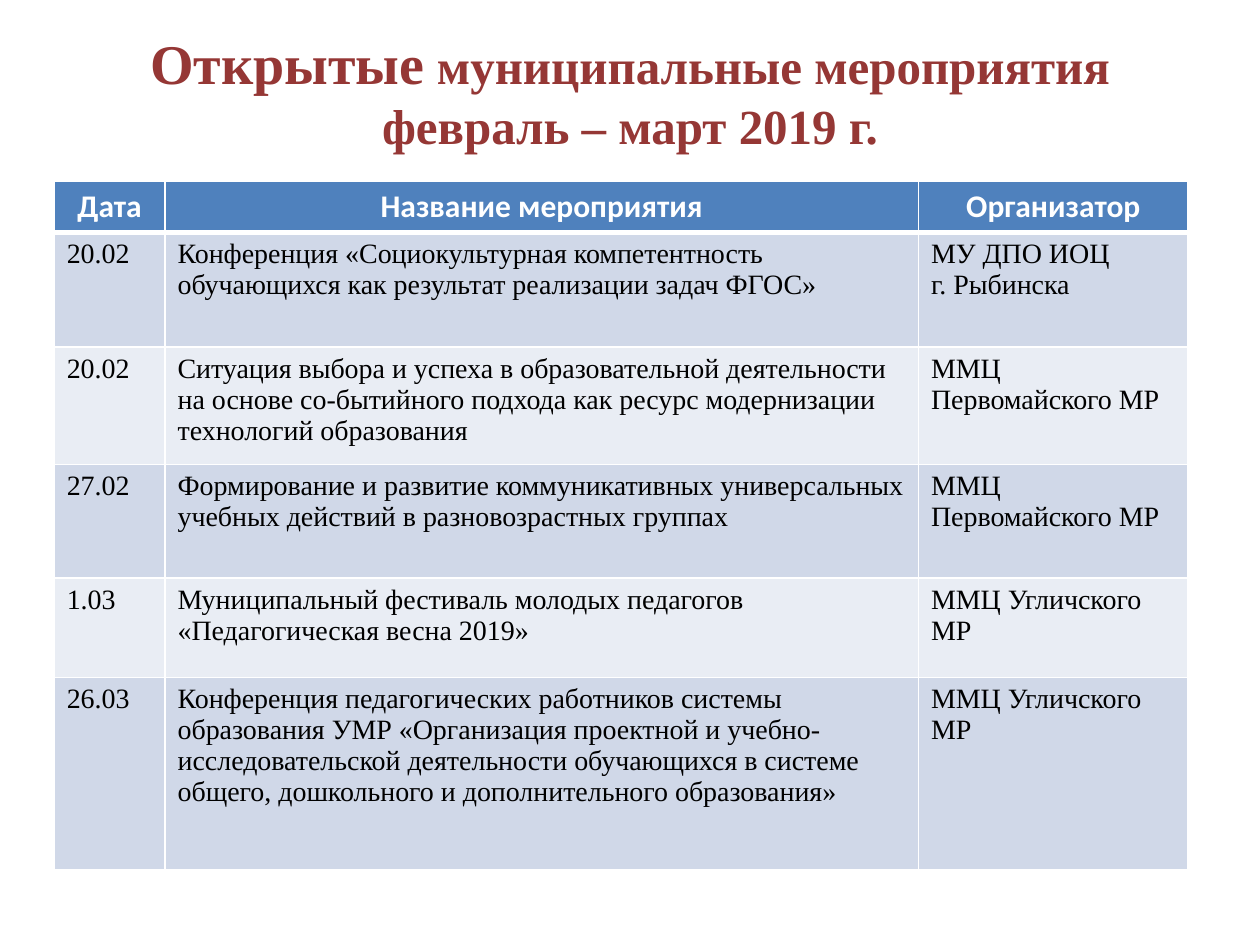
from dataclasses import dataclass

import pptx
import pptx.dml.color
import pptx.enum.text
import pptx.oxml
import pptx.oxml.ns
import pptx.util

Inches = pptx.util.Inches
Pt = pptx.util.Pt
RGB = pptx.dml.color.RGBColor.from_string
CENTER = pptx.enum.text.PP_ALIGN.CENTER
LEFT = pptx.enum.text.PP_ALIGN.LEFT


@dataclass(frozen=True)
class Theme:
    title_font: str = "Times New Roman"
    header_font: str = "Calibri"
    body_font: str = "Times New Roman"
    title_color: str = "953735"
    header_color: str = "FFFFFF"
    body_color: str = "000000"
    header_fill: str = "4F81BD"
    band_fills: tuple = ("D0D8E8", "E9EDF4")
    border_color: str = "FFFFFF"
    title_lead_size: int = 32
    title_size: int = 28
    header_size: int = 18
    body_size: int = 16
    border: int = 1
    header_border: int = 3


class SlideBuilder:
    def __init__(self, prs, theme):
        self.theme = theme
        self.slide = prs.slides.add_slide(prs.slide_layouts[5])

    def style(self, font, name, size, color, bold):
        font.name = name
        font.size = Pt(size)
        font.bold = bold
        font.color.rgb = RGB(color)

    def title(self, lead, rest, second_line, left, top, width, height):
        t = self.theme
        sp = self.slide.shapes.title
        sp.left, sp.top = Inches(left), Inches(top)
        sp.width, sp.height = Inches(width), Inches(height)
        tf = sp.text_frame
        tf.word_wrap = True
        tf.auto_size = pptx.enum.text.MSO_AUTO_SIZE.NONE
        tf.vertical_anchor = pptx.enum.text.MSO_ANCHOR.MIDDLE
        tf.margin_bottom = Inches(0.45)  # lifts the two lines above the table
        p = tf.paragraphs[0]
        p.alignment = CENTER
        self.style(p.font, t.title_font, t.title_size, t.title_color, True)

        def add_run(text, size):
            r = p.add_run()
            r.text = text
            self.style(r.font, t.title_font, size, t.title_color, True)

        add_run(lead, t.title_lead_size)
        add_run(rest, t.title_size)
        p.add_line_break()
        add_run(second_line, t.title_size)

    def borders(self, cell, top, bottom):
        t = self.theme
        tcPr = cell._tc.get_or_add_tcPr()
        widths = {"L": t.border, "R": t.border, "T": top, "B": bottom}
        for i, (side, width) in enumerate(widths.items()):
            ln = pptx.oxml.parse_xml(
                f'<a:ln{side} {pptx.oxml.ns.nsdecls("a")} w="{Pt(width)}">'
                f'<a:solidFill><a:srgbClr val="{t.border_color}"/></a:solidFill>'
                f'</a:ln{side}>')
            tcPr.insert(i, ln)

    def cell(self, cell, text, row):
        t = self.theme
        header = row == 0
        cell.text = text
        cell.fill.solid()
        cell.fill.fore_color.rgb = RGB(
            t.header_fill if header else t.band_fills[(row - 1) % 2])
        for p in cell.text_frame.paragraphs:
            p.alignment = CENTER if header else LEFT
            if header:
                self.style(p.font, t.header_font, t.header_size, t.header_color, True)
            else:
                self.style(p.font, t.body_font, t.body_size, t.body_color, False)
        self.borders(cell,
                     top=t.header_border if row == 1 else t.border,
                     bottom=t.header_border if header else t.border)

    def table(self, rows, left, top, widths, heights):
        table = self.slide.shapes.add_table(
            len(rows), len(widths), Inches(left), Inches(top),
            Inches(sum(widths)), Inches(sum(heights))).table
        for column, width in zip(table.columns, widths):
            column.width = Inches(width)
        for i, (row, height) in enumerate(zip(rows, heights)):
            table.rows[i].height = Inches(height)
            for j, text in enumerate(row):
                self.cell(table.cell(i, j), text, i)


EVENTS = [
    ("Дата", "Название мероприятия", "Организатор"),
    ("20.02",
     "Конференция «Социокультурная компетентность обучающихся как результат "
     "реализации задач ФГОС»",
     "МУ ДПО ИОЦ\nг. Рыбинска"),
    ("20.02",
     "Ситуация выбора и успеха в образовательной деятельности на основе "
     "со-бытийного подхода как ресурс модернизации технологий образования",
     "ММЦ Первомайского МР"),
    ("27.02",
     "Формирование и развитие коммуникативных универсальных учебных действий "
     "в разновозрастных группах",
     "ММЦ Первомайского МР"),
    ("1.03",
     "Муниципальный фестиваль молодых педагогов «Педагогическая весна 2019»",
     "ММЦ Угличского МР"),
    ("26.03",
     "Конференция педагогических работников системы образования УМР "
     "«Организация проектной и учебно-исследовательской деятельности "
     "обучающихся в системе общего, дошкольного и дополнительного образования»",
     "ММЦ Угличского МР"),
]


def main():
    prs = pptx.Presentation()
    prs.slide_width, prs.slide_height = Inches(10), Inches(7.5)
    s = SlideBuilder(prs, Theme())

    # Heading
    s.title("Открытые", " муниципальные мероприятия", "февраль – март 2019 г.",
            left=0.5, top=0.3, width=9, height=1.25)

    # Schedule of events
    s.table(EVENTS, left=0.43, top=1.44, widths=[0.88, 5.98, 2.14],
            heights=[0.37, 0.91, 0.93, 0.9, 0.79, 1.53])

    prs.save("out.pptx")


if __name__ == "__main__":
    main()
